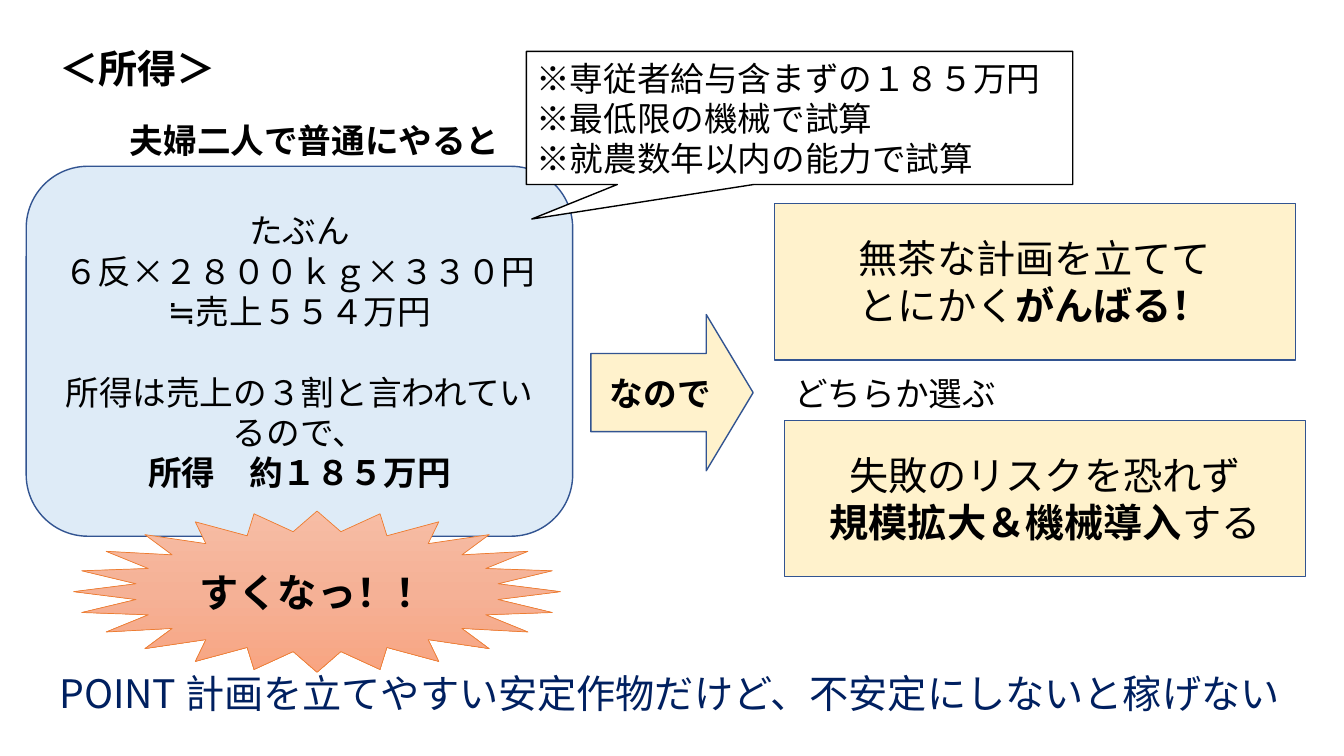
from copy import deepcopy

from pptx import Presentation
from pptx.dml.color import RGBColor
from pptx.enum.shapes import MSO_SHAPE
from pptx.enum.text import MSO_ANCHOR, PP_ALIGN
from pptx.oxml.ns import qn
from pptx.util import Inches, Pt
from lxml import etree

ROUND = MSO_SHAPE.ROUNDED_RECTANGLE
RECT = MSO_SHAPE.RECTANGLE
STAR = MSO_SHAPE.STAR_24_POINT
ARROW = MSO_SHAPE.RIGHT_ARROW
CALL = MSO_SHAPE.RECTANGULAR_CALLOUT
LEFT, CENTER = PP_ALIGN.LEFT, PP_ALIGN.CENTER
TOP, MIDDLE = MSO_ANCHOR.TOP, MSO_ANCHOR.MIDDLE

BLACK = RGBColor(0x00, 0x00, 0x00)
WHITE = RGBColor(0xFF, 0xFF, 0xFF)
NAVY = RGBColor(0x00, 0x20, 0x60)
BLUE = RGBColor(0x32, 0x54, 0x91)
SKY = RGBColor(0xDE, 0xEB, 0xF7)
CREAM = RGBColor(0xFF, 0xF2, 0xCC)
ORANGE = RGBColor(0xED, 0x7D, 0x31)
GLOW = (RGBColor(0xF7, 0xBD, 0xA5), RGBColor(0xF5, 0xB1, 0x96),
        RGBColor(0xF8, 0xA5, 0x82))
FONT = "Noto Sans CJK JP"


def style(item, values):
    for name, value in values.items():
        setattr(item, name, value)


def place(shape, box):
    names = ("left", "top", "width", "height")
    style(shape, dict(zip(names, map(Inches, box))))


def add_run(para, text, size, bold, color):
    run = para.add_run()
    run.text = text
    style(run.font, {"name": FONT, "size": Pt(size), "bold": bold})
    run.font.color.rgb = color
    east = etree.SubElement(run.font._element, qn("a:ea"))
    east.set("typeface", FONT)


def write(shape, lines, size, align=LEFT, anchor=TOP, wrap=True, color=BLACK):
    frame = shape.text_frame
    style(frame, {"word_wrap": wrap, "vertical_anchor": anchor})
    for i, runs in enumerate(lines):
        para = frame.add_paragraph() if i else frame.paragraphs[0]
        style(para, {"alignment": align, "line_spacing": Pt(size * 1.2),
                     "space_before": Pt(0)})
        for text, bold in runs:
            add_run(para, text, size, bold, color)
    return frame


def add_label(slide, box, text, size, bold=False, wrap=False, color=BLACK):
    shape = slide.shapes.add_textbox(*map(Inches, box))
    write(shape, [[(text, bold)]], size, wrap=wrap, color=color)


def add_panel(slide, kind, box, fill, lines, size, align=CENTER,
              line=BLUE, width=1, adjust=()):
    shape = slide.shapes.add_shape(kind, *map(Inches, box))
    shape.shadow.inherit = False
    for i, value in enumerate(adjust):
        shape.adjustments[i] = value
    if fill:
        shape.fill.solid()
        shape.fill.fore_color.rgb = fill
    shape.line.color.rgb = line
    shape.line.width = Pt(width)
    write(shape, lines, size, align, MIDDLE)
    return shape


def blend(shape, colors):
    shape.fill.gradient()
    shape.fill.gradient_angle = 270
    first = shape._element.spPr.find(".//" + qn("a:gs"))
    middle = deepcopy(first)
    middle.set("pos", "50000")
    first.addnext(middle)
    for stop, color in zip(shape.fill.gradient_stops, colors):
        stop.color.rgb = color


def main():
    deck = Presentation()
    style(deck, {"slide_width": Inches(13.33), "slide_height": Inches(7.5)})
    slide = deck.slides.add_slide(deck.slide_layouts[5])

    title = slide.shapes.title
    place(title, (0.49, 0.39, 1.77, 0.57))
    write(title, [[("＜所得＞", True)]], 28, wrap=False)

    income = add_panel(slide, ROUND, (0.26, 1.65, 5.42, 3.67), SKY, [
        [("たぶん", False)],
        [("６反×２８００ｋｇ×３３０円", False)],
        [("≒売上５５４万円", False)],
        [("所得は売上の３割と言われているので、", False)],
        [("所得　約１８５万円", True)]], 24)
    income.text_frame.paragraphs[3].space_before = Pt(28.8)

    burst = add_panel(slide, STAR, (0.73, 5.07, 4.83, 1.6), None,
                      [[("すくなっ！！", True)]], 28, line=ORANGE, width=0.5)
    blend(burst, GLOW)

    add_panel(slide, ARROW, (5.86, 3.12, 1.61, 1.55), CREAM,
              [[("なので", True)]], 24, adjust=(0.5, 0.3))
    add_panel(slide, CALL, (5.22, 0.51, 5.42, 1.32), WHITE, [
        [("※専従者給与含まずの１８５万円", False)],
        [("※最低限の機械で試算", False)],
        [("※就農数年以内の能力で試算", False)]], 24, LEFT, BLACK,
        adjust=(-0.49, 0.76))

    add_panel(slide, RECT, (7.68, 2.02, 5.17, 1.55), CREAM, [
        [("無茶な計画を立てて", False)],
        [("とにかく", False), ("がんばる！", True)]], 28)
    add_panel(slide, RECT, (7.78, 4.17, 5.17, 1.55), CREAM, [
        [("失敗のリスクを恐れず", False)],
        [("規模拡大＆機械導入", True), ("する", False)]], 28)

    add_label(slide, (7.78, 3.65, 2.22, 0.5), "どちらか選ぶ", 24)
    add_label(slide, (1.19, 1.14, 3.9, 0.5), "夫婦二人で普通にやると", 24, True)
    add_label(slide, (0.49, 6.59, 12.46, 0.57),
              "POINT 計画を立てやすい安定作物だけど、不安定にしないと稼げない",
              28, wrap=True, color=NAVY)
    deck.save("out.pptx")


if __name__ == "__main__":
    main()
